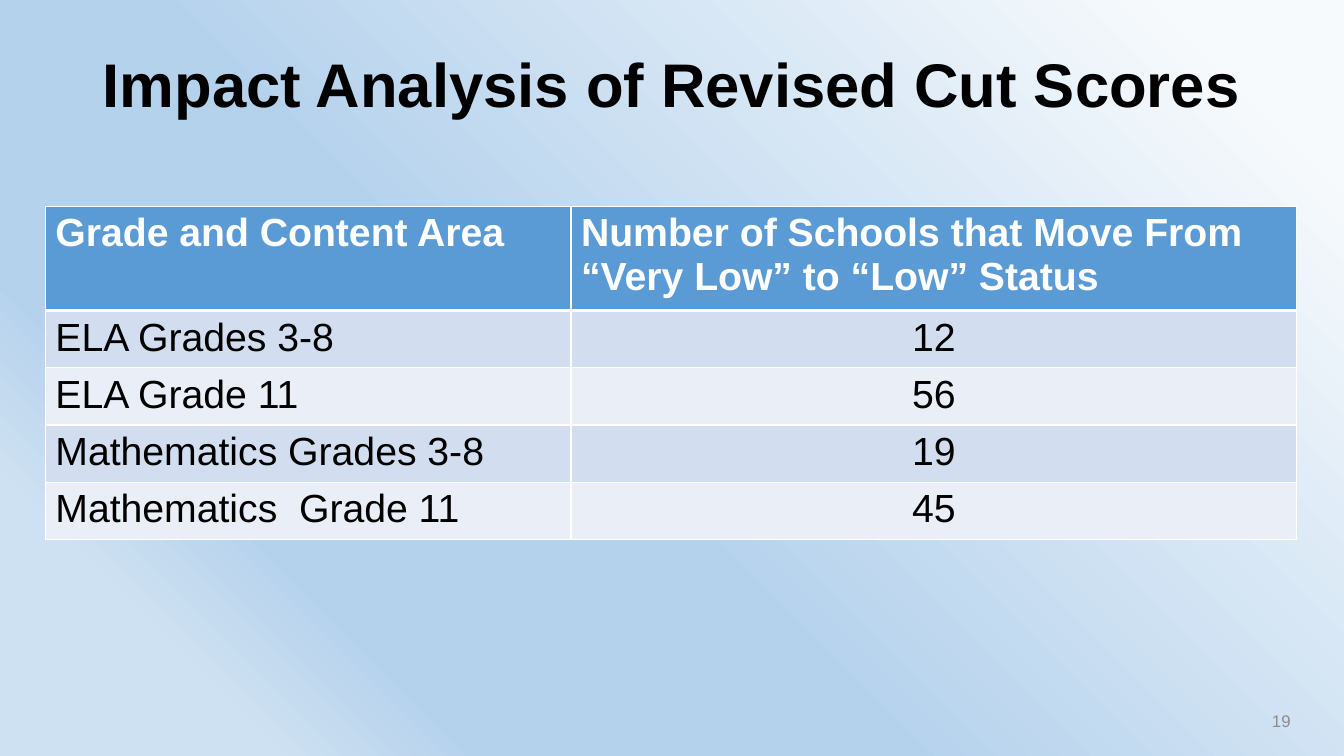
"""Build the slide on the impact of revised cut scores."""
import copy
from dataclasses import dataclass

import pptx
import pptx.dml.color
import pptx.enum.text
import pptx.oxml
import pptx.oxml.ns
import pptx.util

Pt = pptx.util.Pt
RGB = pptx.dml.color.RGBColor.from_string
ALIGN = pptx.enum.text.PP_ALIGN
MIDDLE = pptx.enum.text.MSO_ANCHOR.MIDDLE


@dataclass(frozen=True)
class Theme:
    font: str = "Arial"
    ink: str = "000000"
    white: str = "FFFFFF"
    muted: str = "8C8C8C"
    header: str = "5B9BD5"
    bands: tuple = ("D2DEEF", "EAEFF7")
    sky: tuple = ((8, "F7FAFD"), (57, "B5D2EC"), (77, "B5D2EC"), (87, "CEE1F2"))
    title_size: int = 44
    table_size: int = 28
    number_size: int = 12


theme = Theme()


def write(frame, text, size, color, align, bold=False):
    frame.word_wrap = True
    line = frame.paragraphs[0]
    line.text = text
    line.alignment = align
    font = line.runs[0].font
    font.name, font.size, font.bold = theme.font, Pt(size), bold
    font.color.rgb = RGB(color)


def add_border(cell, sides):
    for position, (side, width) in enumerate(sides.items()):
        edge = pptx.oxml.parse_xml(
            f'<a:ln{side} {pptx.oxml.ns.nsdecls("a")} w="{Pt(width)}"><a:solidFill>'
            f'<a:srgbClr val="{theme.white}"/></a:solidFill></a:ln{side}>'
        )
        cell._tc.get_or_add_tcPr().insert(position, edge)


deck = pptx.Presentation()
deck.slide_width, deck.slide_height = Pt(960), Pt(540)
slide = deck.slides.add_slide(deck.slide_layouts[6])

sky = slide.background.fill
sky.gradient()
sky.gradient_angle = 225
stop_list = sky.gradient_stops[0]._gs.getparent()
for _ in theme.sky[2:]:
    stop_list.append(copy.deepcopy(stop_list[0]))
for stop, (percent, color) in zip(sky.gradient_stops, theme.sky):
    stop.position = percent / 100
    stop.color.rgb = RGB(color)

title = slide.shapes.add_textbox(Pt(0), Pt(0), Pt(960), Pt(124.5)).text_frame
title.vertical_anchor = MIDDLE
write(title, "Impact Analysis of Revised Cut Scores", theme.title_size,
      theme.ink, ALIGN.CENTER, True)
title.paragraphs[0].line_spacing = 0.9

page_number = slide.shapes.add_textbox(Pt(713), Pt(500.5), Pt(216), Pt(28.75)).text_frame
page_number.vertical_anchor = MIDDLE
write(page_number, "19", theme.number_size, theme.muted, ALIGN.RIGHT)

school_counts = [
    ("Grade and Content Area", "Number of Schools that Move From “Very Low” to “Low” Status"),
    ("ELA Grades 3-8", "12"),
    ("ELA Grade 11", "56"),
    ("Mathematics Grades 3-8", "19"),
    ("Mathematics  Grade 11", "45"),
]
column_widths = (375.5, 518.5)
row_heights = [69.5] + [38.4] * 4
impact = slide.shapes.add_table(
    len(row_heights), len(column_widths), Pt(32.4), Pt(147.4),
    Pt(sum(column_widths)), Pt(sum(row_heights)),
).table
for column, width in zip(impact.columns, column_widths):
    column.width = Pt(width)

for r, entries in enumerate(school_counts):
    impact.rows[r].height = Pt(row_heights[r])
    is_header = r == 0
    for c, entry in enumerate(entries):
        cell = impact.cell(r, c)
        cell.fill.solid()
        cell.fill.fore_color.rgb = RGB(theme.header if is_header else theme.bands[(r - 1) % 2])
        write(cell.text_frame, entry, theme.table_size,
              theme.white if is_header else theme.ink,
              ALIGN.CENTER if c and not is_header else ALIGN.LEFT, is_header)
        add_border(cell, {"L": 1, "R": 1, "T": 3 if r == 1 else 1, "B": 3 if is_header else 1})

deck.save("out.pptx")
